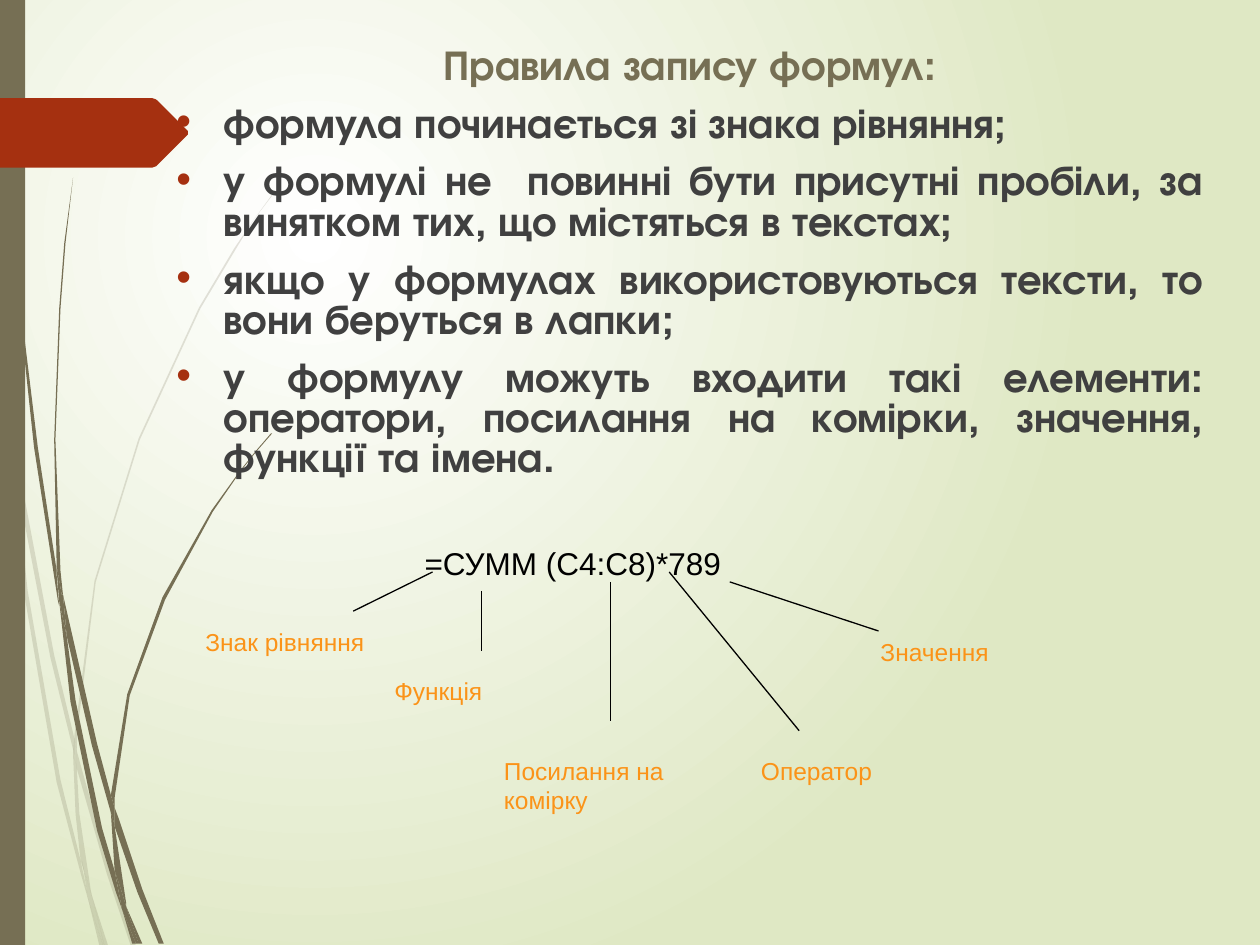
from collections import namedtuple
from dataclasses import dataclass

from lxml.etree import SubElement
from pptx import Presentation
from pptx.dml.color import RGBColor
from pptx.enum.shapes import MSO_CONNECTOR, MSO_SHAPE
from pptx.enum.text import MSO_AUTO_SIZE, PP_ALIGN
from pptx.oxml.ns import qn
from pptx.util import Cm, Pt

Box = namedtuple("Box", "left top width height")
Callout = namedtuple("Callout", "text label start end")


@dataclass(frozen=True)
class Theme:
    """Colours, fonts and type sizes of the deck."""
    olive: RGBColor = RGBColor(0x76, 0x6F, 0x54)
    rust: RGBColor = RGBColor(0xA5, 0x30, 0x10)
    charcoal: RGBColor = RGBColor(0x40, 0x40, 0x40)
    orange: RGBColor = RGBColor(0xFB, 0x93, 0x18)
    black: RGBColor = RGBColor(0, 0, 0)
    white: RGBColor = RGBColor(0xFF, 0xFF, 0xFF)
    pale_green: RGBColor = RGBColor(0xDF, 0xE8, 0xC4)
    rules_font: str = "TeX Gyre Adventor"
    diagram_font: str = "Arial"
    rules_size: Pt = Pt(24)
    formula_size: Pt = Pt(18)
    label_size: Pt = Pt(14)
    line_width: Pt = Pt(0.75)


THEME = Theme()
OUTLINE_UNIT = Cm(0.0254)

FAINT_WISPS = [
    [(8, 350), (6, 322), (0, 282), (0, 299), (7, 344)],
    [(40, 522), (59, 599), (59, 586), (43, 520), (10, 345), (12, 376)],
    [(64, 607), (61, 596), (61, 610), (85, 694), (104, 751), (108, 751), (88, 692)],
    [(83, 751), (86, 751), (73, 711)],
    [(64, 683), (48, 619), (22, 469), (12, 376), (8, 350), (19, 470), (45, 621),
     (64, 693), (70, 714), (69, 707)],
    [(58, 599), (60, 646), (64, 683), (67, 692), (73, 711), (72, 706), (63, 646),
     (61, 610), (61, 608)],
    [(61, 584), (76, 462), (111, 349), (159, 245), (187, 198), (201, 175), (217, 154),
     (217, 153), (201, 175), (186, 197), (158, 244), (110, 348), (75, 461), (59, 584),
     (59, 586), (61, 596)],
    [(70, 714), (79, 751), (82, 751)],
    [(61, 608), (61, 610), (61, 596), (59, 586), (58, 599)],
    [(67, 692), (65, 683), (69, 707), (70, 714), (82, 751), (83, 751), (73, 711)],
]
DARK_WISPS = [
    [(5, 110), (14, 233), (27, 355), (46, 477), (47, 481), (45, 457), (45, 453),
     (30, 355), (15, 232), (6, 109), (4, 48), (3, 0), (2, 0), (3, 48)],
    [(73, 592), (88, 645), (88, 633), (88, 631), (77, 590), (50, 472), (53, 505)],
    [(94, 649), (91, 641), (91, 656), (109, 708), (126, 749), (130, 749), (113, 706)],
    [(91, 691), (81, 657), (60, 556), (53, 505), (47, 477), (56, 557), (77, 659),
     (92, 708), (97, 722), (96, 717)],
    [(50, 472), (48, 453), (44, 349), (48, 245), (52, 193), (58, 141), (51, 193),
     (47, 245), (43, 349), (45, 449), (49, 472)],
    [(110, 749), (113, 749), (100, 719)],
    [(47, 477), (53, 505), (50, 472), (49, 472), (45, 449), (45, 453)],
    [(91, 633), (103, 552), (131, 476), (169, 406), (191, 374), (203, 359), (216, 344),
     (215, 344), (203, 358), (191, 373), (168, 405), (129, 474), (101, 551), (88, 631),
     (91, 641)],
    [(97, 722), (105, 749), (108, 749)],
    [(88, 645), (91, 691), (96, 706), (100, 719), (100, 716), (91, 656), (90, 651)],
    [(88, 645), (90, 651), (91, 656), (91, 641), (88, 631), (88, 633)],
    [(96, 706), (91, 691), (96, 717), (97, 722), (108, 749), (110, 749), (100, 719)],
]
ARROW = [(149, 29), (124, 54), (121, 55), (0, 55), (0, 0), (121, 0), (124, 1), (149, 26)]

HEADING = "Правила запису формул:"
RULES = [
    "формула починається зі знака рівняння;",
    "у формулі не  повинні бути присутні пробіли, за винятком тих, що містяться в текстах;",
    "якщо у формулах використовуються тексти, то вони беруться в лапки;",
    "у формулу можуть входити такі елементи: оператори, посилання на комірки, "
    "значення, функції та імена.",
]
FORMULA = "=СУММ (С4:С8)*789"
CALLOUTS = [
    Callout("Знак рівняння", Box(0, 1.6, 4.19, 0.84), (4.83, 0.61), (3.23, 1.4)),
    Callout("Функція", Box(3.81, 2.59, 3.4, 0.84), (5.82, 0.99), (5.82, 2.21)),
    Callout("Посилання на комірку", Box(6.02, 4.19, 4.8, 1.45), (8.41, 0.81), (8.41, 3.61)),
    Callout("Оператор", Box(11.2, 4.19, 4.19, 0.84), (9.6, 0.61), (12.22, 3.81)),
    Callout("Значення", Box(13.61, 1.8, 4.9, 0.84), (10.82, 0.81), (13.82, 1.8)),
]


def paint(shape, color):
    """Fill a shape flatly, without line or shadow."""
    shape.shadow.inherit = False
    shape.fill.solid()
    shape.fill.fore_color.rgb = color
    shape.line.fill.background()


def add_outline(shapes, box, points, color):
    """Draw a closed outline relative to the box."""
    builder = shapes.build_freeform(*points[0], scale=OUTLINE_UNIT)
    builder.add_line_segments(points[1:], close=True)
    shape = builder.convert_to_shape(Cm(box.left), Cm(box.top))
    paint(shape, color)
    return shape


def add_wisps(page, box, outlines, opacity=100):
    """Group a bundle of grass blades at the given opacity."""
    bundle = page.shapes.add_group_shape()
    for points in outlines:
        blade = add_outline(bundle.shapes, box, points, THEME.olive)
        if opacity < 100:
            color = blade.element.spPr.find(qn("a:solidFill"))[0]
            SubElement(color, qn("a:alpha"), val=str(opacity * 1000))


def add_background(page):
    """Fill the page with a radial gradient."""
    fill = page.background.fill
    fill.gradient()
    for stop, position, color in zip(fill.gradient_stops, (0, 1), (THEME.white, THEME.pale_green)):
        stop.position = position
        stop.color.rgb = color
    gradient = next(page.element.iter(qn("a:gradFill")))
    gradient.remove(gradient.find(qn("a:lin")))
    radial = SubElement(gradient, qn("a:path"), path="circle")
    SubElement(radial, qn("a:fillToRect"), l="50000", t="50000", r="100000", b="100000")


def add_decoration(page, box):
    """Draw the blades, the side band and the arrow tab."""
    add_wisps(page, box, FAINT_WISPS, opacity=20)
    add_wisps(page, box, DARK_WISPS)
    band = page.shapes.add_shape(
        MSO_SHAPE.RECTANGLE, Cm(box.left), Cm(box.top), Cm(0.51), Cm(box.height))
    paint(band, THEME.olive)
    add_outline(page.shapes, Box(box.left, box.top + 1.98, 3.78, 1.4), ARROW, THEME.rust)


def set_font(para, name, size, color, bold=False):
    """Set the font of a whole paragraph."""
    para.font.name, para.font.size, para.font.bold = name, size, bold
    para.font.color.rgb = color


def fill_rules(page, box):
    """Write the heading and the bulleted rules into the body placeholder."""
    body = page.placeholders[1]
    body.left, body.top, body.width, body.height = map(Cm, box)
    body.element.getparent().append(body.element)
    frame = body.text_frame
    frame.auto_size = MSO_AUTO_SIZE.NONE
    frame.text = "\n".join([HEADING, *RULES])
    for number, para in enumerate(frame.paragraphs):
        para.line_spacing = 0.8
        para.space_before = Pt(10)
        para.alignment = PP_ALIGN.JUSTIFY if number else PP_ALIGN.CENTER
        set_font(para, THEME.rules_font, THEME.rules_size,
                 THEME.charcoal if number else THEME.olive, bold=True)
        properties = para._p.get_or_add_pPr()
        if number:
            bullet_color = SubElement(properties, qn("a:buClr"))
            SubElement(bullet_color, qn("a:srgbClr"), val=str(THEME.rust))
            SubElement(properties, qn("a:buFont"), typeface=THEME.diagram_font)
            SubElement(properties, qn("a:buChar"), char="•")
        else:
            SubElement(properties, qn("a:buNone"))
        properties.append(properties.find(qn("a:defRPr")))


def add_label(page, origin, box, text, size, color):
    """Add a text box placed relative to the origin box."""
    label = page.shapes.add_textbox(
        Cm(origin.left + box.left), Cm(origin.top + box.top), Cm(box.width), Cm(box.height))
    frame = label.text_frame
    frame.word_wrap = True
    frame.auto_size = MSO_AUTO_SIZE.SHAPE_TO_FIT_TEXT
    frame.text = text
    set_font(frame.paragraphs[0], THEME.diagram_font, size, color)
    return frame.paragraphs[0]


def add_diagram(page, box):
    """Draw the sample formula with a line and label for each part."""
    formula = add_label(page, box, Box(4.42, 0, 10.01, 0.94), FORMULA,
                        THEME.formula_size, THEME.black)
    formula.line_spacing = 0.9
    for callout in CALLOUTS:
        ends = [Cm(offset + value) for point in (callout.start, callout.end)
                for offset, value in zip(box[:2], point)]
        line = page.shapes.add_connector(MSO_CONNECTOR.STRAIGHT, *ends)
        line.line.color.rgb = THEME.black
        line.line.width = THEME.line_width
        SubElement(line.element.spPr, qn("a:effectLst"))
        add_label(page, box, callout.label, callout.text, THEME.label_size, THEME.orange)


def main():
    """Build and save the deck."""
    deck = Presentation()
    deck.slide_width, deck.slide_height = Cm(25.4), Cm(19.05)
    page = deck.slides.add_slide(deck.slide_layouts[1])
    title = page.shapes.title.element
    title.getparent().remove(title)
    add_background(page)
    add_decoration(page, Box(0, 0, 25.4, 19.05))
    fill_rules(page, Box(3.3, 0.84, 21.21, 9.6))
    add_diagram(page, Box(3.89, 10.92, 18.51, 5.64))
    deck.save("out.pptx")


if __name__ == "__main__":
    main()
